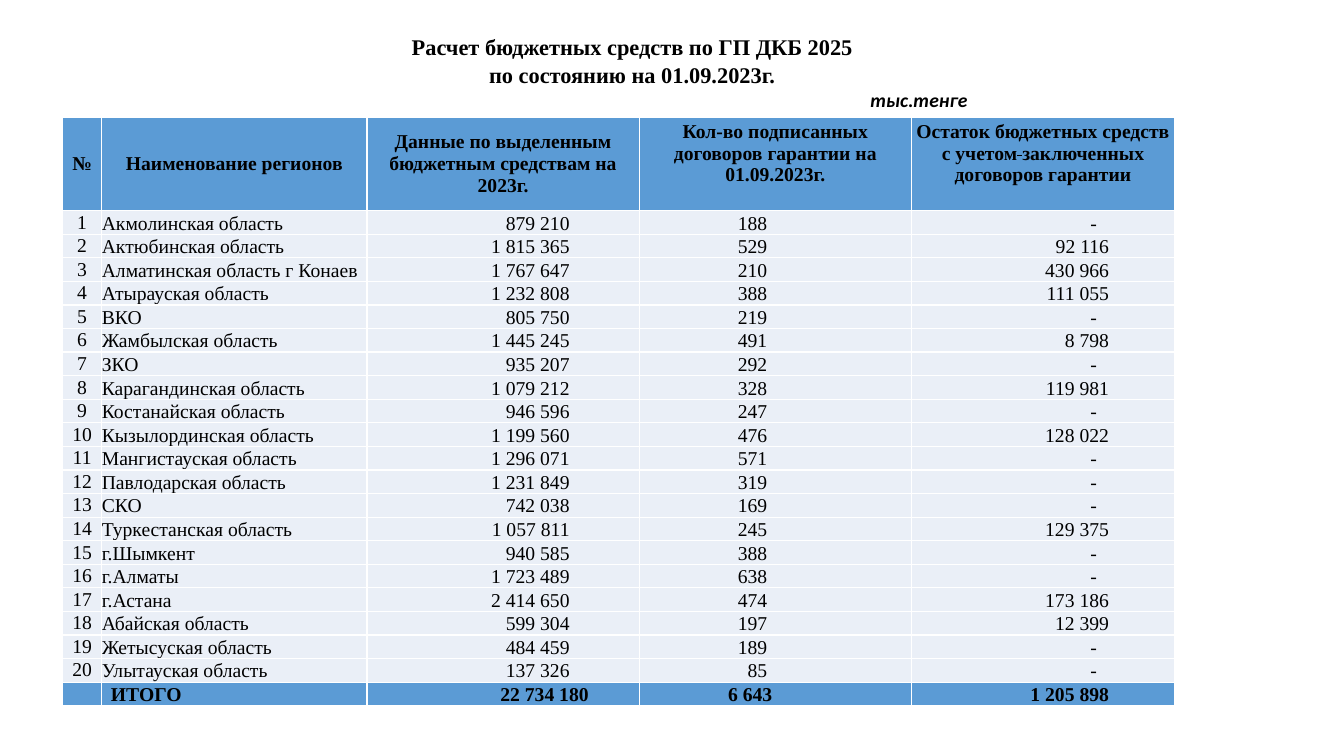
from lxml import etree
from pptx import Presentation, util as u
from pptx.dml.color import RGBColor
from pptx.enum import text
from pptx.oxml.ns import qn

LEFT, MID, RIGHT = text.PP_ALIGN.LEFT, text.PP_ALIGN.CENTER, text.PP_ALIGN.RIGHT
BLUE, PALE, WHITE, BLACK = "5B9BD5", "EAEFF7", "FFFFFF", "000000"

TITLE = "Расчет бюджетных средств по ГП ДКБ 2025\vпо состоянию на 01.09.2023г."
HEADS = [
    ["№"],
    ["Наименование регионов"],
    ["Данные по выделенным бюджетным средствам на 2023г."],
    ["Кол-во подписанных договоров гарантии на 01.09.2023г."],
    ["Остаток бюджетных средств с учетом", " ", "заключенных договоров гарантии"],
]
ROWS = [
    ("Акмолинская область", "879 210", "188", "-"),
    ("Актюбинская область", "1 815 365", "529", "92 116"),
    ("Алматинская область г Конаев", "1 767 647", "210", "430 966"),
    ("Атырауская область", "1 232 808", "388", "111 055"),
    ("ВКО", "805 750", "219", "-"),
    ("Жамбылская область", "1 445 245", "491", "8 798"),
    ("ЗКО", "935 207", "292", "-"),
    ("Карагандинская область", "1 079 212", "328", "119 981"),
    ("Костанайская область", "946 596", "247", "-"),
    ("Кызылординская область", "1 199 560", "476", "128 022"),
    ("Мангистауская область", "1 296 071", "571", "-"),
    ("Павлодарская область", "1 231 849", "319", "-"),
    ("СКО", "742 038", "169", "-"),
    ("Туркестанская область", "1 057 811", "245", "129 375"),
    ("г.Шымкент", "940 585", "388", "-"),
    ("г.Алматы", "1 723 489", "638", "-"),
    ("г.Астана", "2 414 650", "474", "173 186"),
    ("Абайская область", "599 304", "197", "12 399"),
    ("Жетысуская область", "484 459", "189", "-"),
    ("Улытауская область", "137 326", "85", "-"),
]
TOTAL = ("", "ИТОГО", "22 734 180", "6 643", "1 205 898")


def color(code):
    return RGBColor.from_string(code)


class Deck:
    face, size = "Times New Roman", 14

    def __init__(self):
        self.prs = Presentation()
        self.prs.slide_width, self.prs.slide_height = u.Inches(13.33), u.Inches(7.5)
        self.slide = self.prs.slides.add_slide(self.prs.slide_layouts[6])

    def style(self, para, align, bold=False, size=None, face=None, italic=False):
        para.alignment = align
        font = para.font
        font.name, font.size = face or self.face, u.Pt(size or self.size)
        font.bold, font.italic = bold, italic
        font.color.rgb = color(BLACK)

    def box(self, left, top, width, height):
        spot = [u.Inches(n) for n in (left, top, width, height)]
        frame = self.slide.shapes.add_textbox(*spot).text_frame
        frame.word_wrap = True
        return frame

    def table(self, left, top, cols, rows):
        spot = [u.Inches(n) for n in (left, top, sum(cols), sum(rows))]
        grid = self.slide.shapes.add_table(len(rows), len(cols), *spot).table
        grid.first_row = grid.horz_banding = False
        for col, width in zip(grid.columns, cols):
            col.width = u.Inches(width)
        for row, height in zip(grid.rows, rows):
            row.height = u.Inches(height)
        return grid

    def cell(self, cell, parts, fill, align, anchor, bold=False, pads=(0, 0, 0)):
        """Fill one cell; pads are left, right and bottom, a lone space is struck."""
        cell.margin_top = 0
        cell.margin_left, cell.margin_right, cell.margin_bottom = map(u.Inches, pads)
        cell.vertical_anchor = anchor
        props = cell._tc.get_or_add_tcPr()
        for side in ("lnL", "lnR", "lnT", "lnB"):
            line = etree.SubElement(props, qn("a:" + side), w=str(u.Pt(1)))
            paint = etree.SubElement(line, qn("a:solidFill"))
            etree.SubElement(paint, qn("a:srgbClr"), val=WHITE)
        cell.fill.solid()
        cell.fill.fore_color.rgb = color(fill)
        para = cell.text_frame.paragraphs[0]
        self.style(para, align, bold)
        for part in filter(None, parts):
            run = para.add_run()
            run.text = part
            if part == " ":
                run._r.get_or_add_rPr().set("strike", "sngStrike")
        if not para.runs:
            para._p.get_or_add_endParaRPr().set("sz", str(self.size * 100))


def main():
    deck = Deck()

    # Title and unit
    frame = deck.box(0.42, 0.28, 11.7, 1.11)
    title = frame.paragraphs[0]
    title.text = TITLE
    title.line_spacing = u.Pt(19.5)
    deck.style(title, MID, True, 16)
    unit = frame.add_paragraph()
    unit.text = "тыс.тенге"
    unit._p.get_or_add_pPr().set("marL", str(u.Inches(5.69)))
    deck.style(unit, MID, True, 14, "Calibri", True)

    # Table frame
    head, low = 0.93, 4.9 / (len(ROWS) + 1)
    grid = deck.table(0.62, 1.16, [0.39, 2.63, 2.7, 2.7, 2.61],
                      [head] + [low] * (len(ROWS) + 1))
    middle, bottom = text.MSO_ANCHOR.MIDDLE, text.MSO_ANCHOR.BOTTOM

    # Header row
    for c, parts in enumerate(HEADS):
        deck.cell(grid.cell(0, c), parts, BLUE, MID, middle, True,
                  (0, 0, 0.2 if c > 2 else 0))

    # Regions and total
    aligns = [MID, LEFT, RIGHT, RIGHT, RIGHT]
    insets = [0, 0, 0.69, 1.43, 0.65]
    sums = [0, 0, 0.5, 1.38, 0.65]
    lines = [(str(n), *row) for n, row in enumerate(ROWS, 1)] + [TOTAL]
    for r, line in enumerate(lines, 1):
        last = line is TOTAL
        for c, word in enumerate(line):
            right = 0.77 if word == "-" else (sums if last else insets)[c]
            left = 0.09 if last and c == 1 else 0
            deck.cell(grid.cell(r, c), [word], BLUE if last else PALE, aligns[c],
                      bottom if c else middle, last, (left, right, 0))

    deck.prs.save("out.pptx")


if __name__ == "__main__":
    main()
